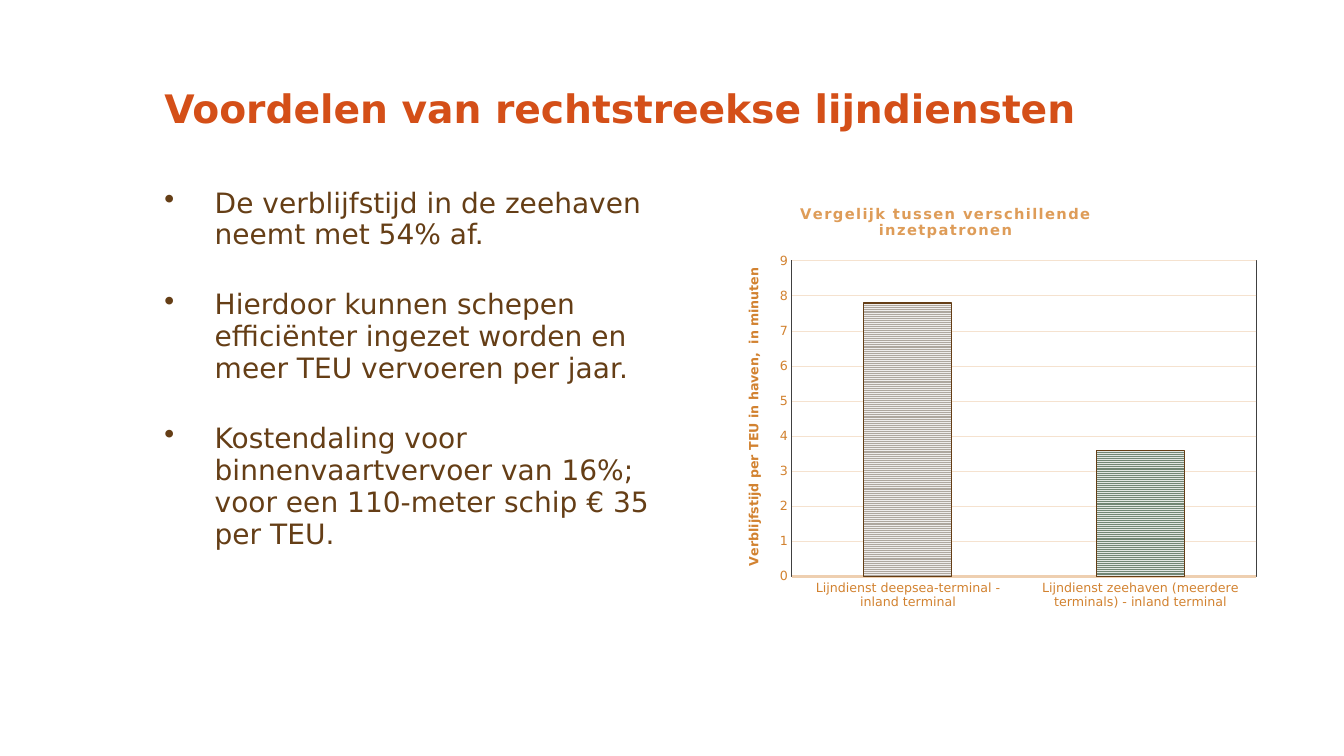
from lxml import etree
from pptx import Presentation
from pptx.chart.data import CategoryChartData
from pptx.dml.color import RGBColor
from pptx.enum.chart import XL_CHART_TYPE as CT, XL_TICK_MARK as TM
from pptx.enum.dml import MSO_PATTERN as PAT
from pptx.enum.text import MSO_ANCHOR as ANCHOR
from pptx.oxml import parse_xml
from pptx.oxml.ns import nsdecls, qn
from pptx.util import Inches, Pt

FONT = "DejaVu Sans"
COLORS = {
    "title": "D44F18", "text": "653E16", "axis": "D28230", "chart_title": "DE9C58",
    "axis_line": "EECFB0", "grid": "F5E2CF", "frame": "404040",
}
BAR_PATTERNS = [("AEA79F", "EFEDEC"), ("718674", "E2E7E3")]
BULLETS = [
    "De verblijfstijd in de zeehaven neemt met 54% af.",
    "Hierdoor kunnen schepen efficiënter ingezet worden en meer TEU vervoeren per jaar.",
    "Kostendaling voor binnenvaartvervoer van 16%; voor een 110-meter schip € 35 per TEU.",
]
DWELL_TIMES = {
    "Lijndienst deepsea-terminal - inland terminal": 7.8,
    "Lijndienst zeehaven (meerdere terminals) - inland terminal": 3.6,
}


def rgb(name):
    """Return the palette colour with the given name."""
    return RGBColor.from_string(COLORS[name])


def style_font(font, size, color, bold=False):
    """Set typeface, size, colour and weight."""
    font.name, font.size, font.bold = FONT, Pt(size), bold
    font.color.rgb = rgb(color)


def add_text_frame(slide, box):
    """Add a wrapping text box without margins and return its frame."""
    tf = slide.shapes.add_textbox(*map(Inches, box)).text_frame
    tf.word_wrap = True
    tf.margin_left = tf.margin_top = tf.margin_right = tf.margin_bottom = 0
    return tf


def add_title(slide, box):
    """Place the slide title at the bottom of its box."""
    tf = add_text_frame(slide, box)
    tf.vertical_anchor = ANCHOR.BOTTOM
    tf.text = "Voordelen van rechtstreekse lijndiensten"
    style_font(tf.paragraphs[0].runs[0].font, 28, "title", True)


def add_bullets(slide, box):
    """Place the bulleted arguments with hanging indents."""
    tf = add_text_frame(slide, box)
    for i, text in enumerate(BULLETS):
        p = tf.add_paragraph() if i else tf.paragraphs[0]
        p.text = text
        p.line_spacing = 0.95
        if i:
            p.space_before = Pt(27)
        pPr = p._p.get_or_add_pPr()
        pPr.set("marL", str(Inches(0.5)))
        pPr.set("indent", str(-Inches(0.5)))
        etree.SubElement(pPr, qn("a:buSzPct")).set("val", "105000")
        etree.SubElement(pPr, qn("a:buChar")).set("char", "•")
        style_font(p.runs[0].font, 20, "text")


def manual_layout(x, y, w=None, h=None):
    """Build a chart layout from fractions of the chart box."""
    target = '<c:layoutTarget val="inner"/>' if w else ""
    size = f'<c:w val="{w}"/><c:h val="{h}"/>' if w else ""
    return parse_xml(
        f'<c:layout {nsdecls("c")}><c:manualLayout>{target}'
        '<c:xMode val="edge"/><c:yMode val="edge"/>'
        f'<c:x val="{x}"/><c:y val="{y}"/>{size}</c:manualLayout></c:layout>')


def set_title(owner, lines, size, color, layout):
    """Give a chart or an axis a bold title at a fixed place."""
    title = owner.chart_title if hasattr(owner, "chart_title") else owner.axis_title
    tf = title.text_frame
    tf.text = "\n".join(lines)
    for p in tf.paragraphs:
        style_font(p.runs[0].font, size, color, True)
    el = title._element
    for old in el.findall(qn("c:layout")):
        el.remove(old)
    el.find(qn("c:tx")).addnext(layout)
    return tf


def frame_plot(chart):
    """Fix the inner plot area and outline it."""
    area = chart._chartSpace.chart.plotArea
    for old in area.findall(qn("c:layout")):
        area.remove(old)
    area.insert(0, manual_layout(0.12, 0.17, 0.86, 0.73))
    area.append(parse_xml(
        f'<c:spPr {nsdecls("c", "a")}><a:noFill/><a:ln w="9525"><a:solidFill>'
        f'<a:srgbClr val="{COLORS["frame"]}"/></a:solidFill></a:ln></c:spPr>'))


def add_dwell_chart(slide, box):
    """Place the column chart comparing dwell times."""
    data = CategoryChartData()
    data.categories = list(DWELL_TIMES)
    data.add_series("Series 1", list(DWELL_TIMES.values()))
    chart = slide.shapes.add_chart(CT.COLUMN_CLUSTERED, *map(Inches, box), data).chart
    chart.has_legend = False
    style_font(chart.font, 9, "text")

    tf = set_title(chart, ["Vergelijk tussen verschillende", "inzetpatronen"],
                   10.5, "chart_title", manual_layout(0.13, 0.03))
    for p in tf.paragraphs:
        p.runs[0].font._element.set("spc", "100")

    cat, val = chart.category_axis, chart.value_axis
    for axis in (cat, val):
        axis.major_tick_mark = axis.minor_tick_mark = TM.NONE
        style_font(axis.tick_labels.font, 9, "axis")
    cat.format.line.color.rgb = rgb("axis_line")
    cat.format.line.width = Pt(1.5)
    val.minimum_scale, val.maximum_scale, val.major_unit = 0, 9, 1
    val.format.line.fill.background()
    val.major_gridlines.format.line.color.rgb = rgb("grid")
    val.major_gridlines.format.line.width = Pt(0.75)
    tf = set_title(val, ["Verblijfstijd per TEU in haven,  in minuten"], 9, "axis",
                   manual_layout(0.03, 0.18))
    tf._txBody.bodyPr.set("rot", "-5400000")
    tf._txBody.bodyPr.set("vert", "horz")

    plot = chart.plots[0]
    plot.gap_width, plot.overlap, plot.vary_by_categories = 164, -22, False
    for i, (fore, back) in enumerate(BAR_PATTERNS):
        fmt = plot.series[0].points[i].format
        fmt.fill.patterned()
        fmt.fill.pattern = PAT.NARROW_HORIZONTAL
        fmt.fill.fore_color.rgb = RGBColor.from_string(fore)
        fmt.fill.back_color.rgb = RGBColor.from_string(back)
        fmt.line.color.rgb = rgb("text")
        fmt.line.width = Pt(0.75)
    frame_plot(chart)


def main():
    """Build and save the slide."""
    prs = Presentation()
    prs.slide_width, prs.slide_height = Inches(13.33), Inches(7.5)
    slide = prs.slides.add_slide(prs.slide_layouts[6])
    add_bullets(slide, (1.63, 1.86, 5.36, 4.29))
    add_title(slide, (1.63, 0.43, 10.94, 0.87))
    add_dwell_chart(slide, (7.21, 1.86, 5.36, 4.29))
    prs.save("out.pptx")


if __name__ == "__main__":
    main()
